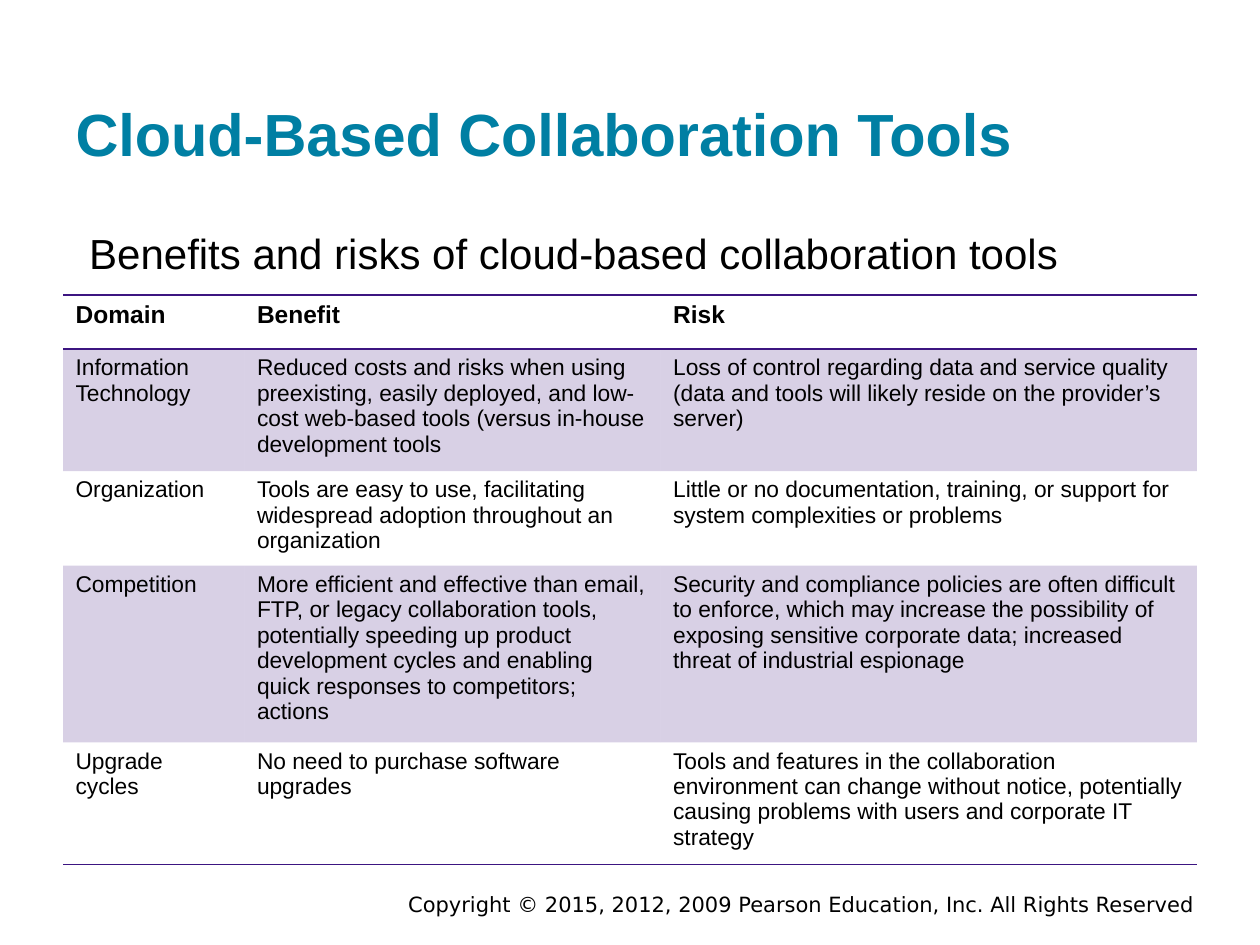
from dataclasses import dataclass

from lxml.etree import SubElement
from pptx import Presentation
from pptx.dml.color import RGBColor
from pptx.enum.text import MSO_ANCHOR as Anchor, PP_ALIGN as Align
from pptx.oxml import parse_xml
from pptx.oxml.ns import nsdecls, qn
from pptx.util import Inches, Pt

WIDTH, HEIGHT = Inches(10), Inches(7.5)
NO_STYLE = "{2D5ABB26-0587-4C30-8999-92F81FD0307C}"


@dataclass(frozen=True)
class Theme:
    teal: str = "007FA3"
    purple: str = "3C1581"
    black: str = "000000"
    font: str = "Arial"
    footer_font: str = "DejaVu Sans"
    title: int = 34
    subtitle: int = 24
    header: int = 14
    body: int = 13
    footer: int = 12
    rule: int = 1
    band_alpha: int = 20


@dataclass(frozen=True)
class Box:
    """Position and size as shares of the slide."""
    left: float
    top: float
    width: float
    height: float

    def emu(self) -> tuple:
        return (int(self.left * WIDTH), int(self.top * HEIGHT),
                int(self.width * WIDTH), int(self.height * HEIGHT))


@dataclass(frozen=True)
class Row:
    domain: str
    benefit: str
    risk: str
    lines: int  # wrapped lines in the tallest cell

    def texts(self) -> tuple:
        return self.domain, self.benefit, self.risk


THEME = Theme()
TITLE = Box(0.05, 0.032, 0.9, 0.16)
SUBTITLE = Box(0.05, 0.227, 0.9, 0.07)
TABLE = Box(0.05, 0.312, 0.9, 0.567)
FOOTER = Box(0.175, 0.937, 0.783, 0.03)
COLUMNS = (0.16, 0.367, 0.473)  # shares of the table width
HEADER_HEIGHT, LINE_HEIGHT, CELL_PADDING = 0.43, 0.2, 0.1

ROWS = (
    Row("Domain", "Benefit", "Risk", 1),
    Row("Information Technology",
        "Reduced costs and risks when using preexisting, easily deployed, and "
        "low-cost web-based tools (versus in-house development tools",
        "Loss of control regarding data and service quality (data and tools "
        "will likely reside on the provider’s server)", 4),
    Row("Organization",
        "Tools are easy to use, facilitating widespread adoption throughout "
        "an organization",
        "Little or no documentation, training, or support for system "
        "complexities or problems", 3),
    Row("Competition",
        "More efficient and effective than email, FTP, or legacy collaboration "
        "tools, potentially speeding up product development cycles and "
        "enabling quick responses to competitors; actions",
        "Security and compliance policies are often difficult to enforce, "
        "which may increase the possibility of exposing sensitive corporate "
        "data; increased threat of industrial espionage", 6),
    Row("Upgrade cycles",
        "No need to purchase software upgrades",
        "Tools and features in the collaboration environment can change "
        "without notice, potentially causing problems with users and "
        "corporate IT strategy", 4),
)


def write(tf, text: str, size: int, color: str = THEME.black,
          bold: bool = False, font: str = THEME.font, align=Align.LEFT):
    tf.text = text
    tf.word_wrap = True
    p = tf.paragraphs[0]
    p.alignment = align
    f = p.runs[0].font
    f.name, f.size, f.bold = font, Pt(size), bold
    f.color.rgb = RGBColor.from_string(color)
    return p


def set_margins(tf, side: float, end: float) -> None:
    tf.margin_left = tf.margin_right = Inches(side)
    tf.margin_top = tf.margin_bottom = Inches(end)


def add_text(slide, box: Box, text: str, size: int, end: float, **style):
    tf = slide.shapes.add_textbox(*box.emu()).text_frame
    set_margins(tf, 0.1, end)
    return write(tf, text, size, **style)


def add_title(slide, text: str) -> None:
    sp = slide.shapes.title
    sp.left, sp.top, sp.width, sp.height = TITLE.emu()
    tf = sp.text_frame
    set_margins(tf, 0.1, 0.1)
    tf.vertical_anchor = Anchor.BOTTOM
    write(tf, text, THEME.title, THEME.teal, bold=True)


def fill_band(cell) -> None:
    cell.fill.solid()
    cell.fill.fore_color.rgb = RGBColor.from_string(THEME.purple)
    color = cell._tc.tcPr.find(".//" + qn("a:srgbClr"))
    SubElement(color, qn("a:alpha"), val=str(THEME.band_alpha * 1000))


def add_rules(cell, sides: str) -> None:
    """Draw cell edges; sides holds T and B in that order."""
    tcPr = cell._tc.get_or_add_tcPr()
    for i, side in enumerate(sides):
        tcPr.insert(i, parse_xml(
            f'<a:ln{side} {nsdecls("a")} w="{Pt(THEME.rule)}"><a:solidFill>'
            f'<a:srgbClr val="{THEME.purple}"/></a:solidFill></a:ln{side}>'))


def add_table(slide, rows: tuple) -> None:
    table = slide.shapes.add_table(len(rows), len(COLUMNS), *TABLE.emu()).table
    table._tbl.tblPr.find(qn("a:tableStyleId")).text = NO_STYLE
    for column, share in zip(table.columns, COLUMNS):
        column.width = int(share * TABLE.width * WIDTH)
    for i, row in enumerate(rows):
        header = i == 0
        table.rows[i].height = Inches(
            HEADER_HEIGHT if header else row.lines * LINE_HEIGHT + CELL_PADDING)
        for cell, text in zip(table.rows[i].cells, row.texts()):
            write(cell.text_frame, text,
                  THEME.header if header else THEME.body, bold=header)
            if i % 2:
                fill_band(cell)
            else:
                cell.fill.background()
            if header:
                add_rules(cell, "TB")
            elif i == len(rows) - 1:
                add_rules(cell, "B")


def main() -> None:
    prs = Presentation()
    prs.slide_width, prs.slide_height = WIDTH, HEIGHT
    slide = prs.slides.add_slide(prs.slide_layouts[5])

    # Footer
    add_text(slide, FOOTER,
             "Copyright © 2015, 2012, 2009 Pearson Education, Inc. "
             "All Rights Reserved",
             THEME.footer, 0.05, font=THEME.footer_font, align=Align.RIGHT)

    # Headings
    add_title(slide, "Cloud-Based Collaboration Tools")
    p = add_text(slide, SUBTITLE,
                 "Benefits and risks of cloud-based collaboration tools",
                 THEME.subtitle, 0.1)
    p._p.get_or_add_pPr().set("marL", str(Inches(0.11)))

    # Benefits and risks
    add_table(slide, ROWS)
    prs.save("out.pptx")


if __name__ == "__main__":
    main()
